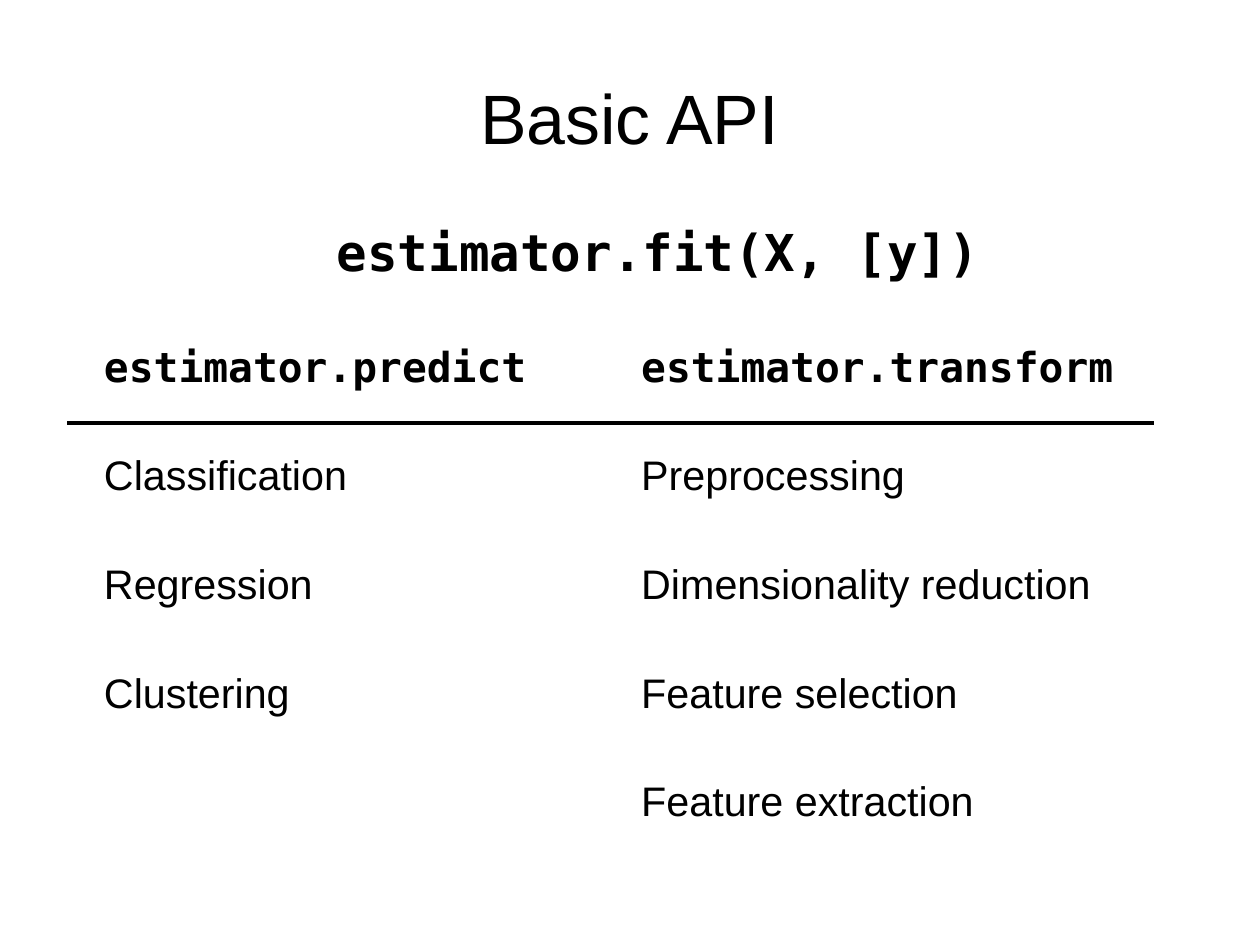
from lxml import etree
from pptx import Presentation
from pptx import util as u
from pptx.dml.color import RGBColor
from pptx.enum import shapes, text
from pptx.oxml.ns import qn

COLORS = {"ink": "000000", "paper": "FFFFFF"}
SANS, MONO = "Arial", "DejaVu Sans Mono"
METHODS = [
    ("estimator.predict", "estimator.transform"),
    ("Classification", "Preprocessing"),
    ("Regression", "Dimensionality reduction"),
    ("Clustering", "Feature selection"),
    ("", "Feature extraction"),
]


def color(name):
    return RGBColor.from_string(COLORS[name])


def style(paragraph, size, name, bold=False):
    font = paragraph.font
    font.size, font.name, font.bold = u.Pt(size), name, bold
    font.color.rgb = color("ink")


def add_heading(slide, box, words, size, name, bold, anchor, indent=0):
    shape = slide.shapes.add_textbox(*map(u.Pt, box))
    frame = shape.text_frame
    frame.word_wrap = True
    frame.vertical_anchor = anchor
    frame.margin_left = u.Pt(indent)
    frame.margin_right = frame.margin_top = frame.margin_bottom = 0
    paragraph = frame.paragraphs[0]
    paragraph.text = words
    paragraph.alignment = text.PP_ALIGN.CENTER
    style(paragraph, size, name, bold)


def add_methods(slide, box):
    left, top, width, height = box
    table = slide.shapes.add_table(
        len(METHODS), len(METHODS[0]), *map(u.Pt, box)).table
    table.first_row = table.horz_banding = False
    table.columns[0].width = u.Pt(width / 2 + 0.4)
    table.columns[1].width = u.Pt(width / 2 - 0.4)
    table.rows[0].height = u.Pt(height / len(METHODS) + 0.5)
    for row, words in enumerate(METHODS):
        for column, word in enumerate(words):
            cell = table.cell(row, column)
            cell.fill.solid()
            cell.fill.fore_color.rgb = color("paper")
            paragraph = cell.text_frame.paragraphs[0]
            paragraph.text = word
            header = row == 0
            style(paragraph, 26, MONO if header else SANS, header)

    rule_left, rule_y = left - 16, top + 53.3
    rule = slide.shapes.add_connector(
        shapes.MSO_CONNECTOR.STRAIGHT, u.Pt(rule_left), u.Pt(rule_y),
        u.Pt(rule_left + width + 8.6), u.Pt(rule_y))
    rule.line.color.rgb = color("ink")
    rule.line.width = u.Pt(2.89)
    etree.SubElement(rule.element.spPr, qn("a:effectLst"))


def main():
    presentation = Presentation()
    presentation.slide_width = u.Pt(793.75)
    presentation.slide_height = u.Pt(595.25)
    slide = presentation.slides.add_slide(presentation.slide_layouts[6])
    add_heading(slide, (39.6, 23.8, 714.2, 99.4), "Basic API",
                44, SANS, False, text.MSO_ANCHOR.MIDDLE)
    add_heading(slide, (39.6, 139, 714.2, 344.9), "estimator.fit(X, [y])",
                32, MONO, True, text.MSO_ANCHOR.TOP, indent=36)
    add_methods(slide, (58.3, 213.1, 676.1, 342.2))
    presentation.save("out.pptx")


if __name__ == "__main__":
    main()
